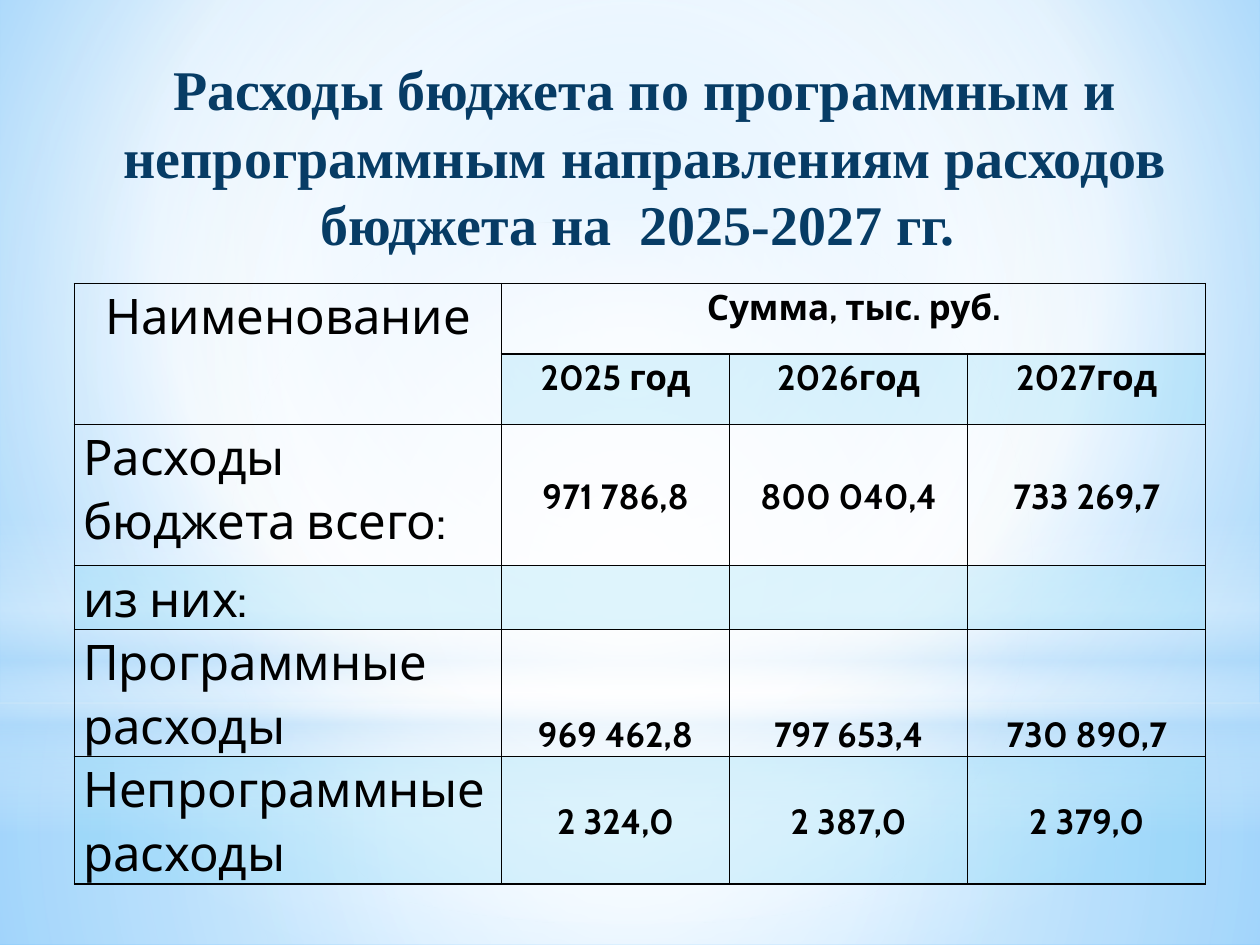
from lxml import etree
from pptx import Presentation
from pptx.dml.color import RGBColor
from pptx.enum.shapes import MSO_SHAPE
from pptx.enum.text import MSO_ANCHOR, PP_ALIGN
from pptx.oxml import parse_xml
from pptx.oxml.ns import qn
from pptx.util import Inches, Pt

RECT, OVAL = MSO_SHAPE.RECTANGLE, MSO_SHAPE.OVAL
LEFT, CENTER = PP_ALIGN.LEFT, PP_ALIGN.CENTER
TOP, MID, LOW = MSO_ANCHOR.TOP, MSO_ANCHOR.MIDDLE, MSO_ANCHOR.BOTTOM
NS = "http://schemas.openxmlformats.org/drawingml/2006/main"

# Content
TITLE = ("Расходы бюджета по программным и непрограммным "
         "направлениям расходов бюджета на  2025-2027 гг. ")
ROWS = [
    ["Наименование", "Сумма, тыс. руб.", "", ""],
    ["", "2025 год", "2026год", "2027год"],
    ["Расходы бюджета всего:", "971 786,8", "800 040,4", "733 269,7"],
    ["из них:", "", "", ""],
    ["Программные расходы", "969 462,8", "797 653,4", "730 890,7"],
    ["Непрограммные расходы", "2 324,0", "2 387,0", "2 379,0"],
]
WIDTHS = [3.39, 1.81, 1.89, 1.89]
HEIGHTS = [0.56, 0.56, 1.12, 0.35, 0.88, 0.88]
ANCHORS = [TOP, TOP, MID, TOP, LOW, MID]  # of the figures, row by row

# Background: stops are (position, colour, opacity), all in percent
BASE = [(0, "9ED5FF", 100), (60, "FFFFFF", 100), (100, "5BB9FF", 100)]
FOCUS = (20, 10, 20, 60)
HEART = (50, 50, 50, 50)
LAYERS = [
    (RECT, (0, 5.58, 10, 1.92), HEART,
     [(0, "FFFFFF", 91), (37, "FFFFFF", 76), (100, "B4DCFA", 79)]),
    (RECT, (0, 0, 10, 5.58), HEART,
     [(0, "FFFFFF", 89), (48, "FFFFFF", 62), (100, "B4DCFA", 79)]),
    (RECT, (0, 4.12, 10, 2.5), None,
     [(0, "FFFFFF", 0), (29, "FFFFFF", 30), (45, "B4DCFA", 40),
      (55, "FFFFFF", 26), (65, "B4DCFA", 60), (100, "FFFFFF", 0)]),
    (OVAL, (0, 1.75, 10, 5.58), HEART,
     [(0, "FFFFFF", 100), (56, "FFFFFF", 0)]),
]


def color(text):
    return RGBColor.from_string(text)


def blend(stops, focus):
    """Gradient fill: round about a focus, or top to bottom without one."""
    marks = "".join(
        f'<a:gs pos="{pos * 1000}"><a:srgbClr val="{tint}">'
        f'<a:alpha val="{alpha * 1000}"/></a:srgbClr></a:gs>'
        for pos, tint, alpha in stops)
    if focus:
        rect = " ".join(f'{side}="{v * 1000}"' for side, v in zip("ltrb", focus))
        way = f'<a:path path="circle"><a:fillToRect {rect}/></a:path>'
    else:
        way = '<a:lin ang="5400000" scaled="0"/>'
    return parse_xml(f'<a:gradFill xmlns:a="{NS}" rotWithShape="1">'
                     f'<a:gsLst>{marks}</a:gsLst>{way}</a:gradFill>')


def swap(fill, owner, stops, focus):
    """Put a gradient in the place of a plain fill."""
    fill.solid()
    old = owner.find(qn("a:solidFill"))
    owner.replace(old, blend(stops, focus))


def write(para, text, font, size, tint, bold):
    run = para.add_run()
    run.text = text
    run.font.name, run.font.size, run.font.bold = font, Pt(size), bold
    run.font.color.rgb = color(tint)


def edge(cell):
    """Thin black lines on all four sides."""
    props = cell._tc.get_or_add_tcPr()
    for side in "LRTB":
        props.append(parse_xml(
            f'<a:ln{side} xmlns:a="{NS}" w="12700"><a:solidFill>'
            f'<a:srgbClr val="000000"/></a:solidFill></a:ln{side}>'))


def style(cell, row, col, text):
    cell.margin_left = cell.margin_right = Inches(0.07)
    cell.margin_top = cell.margin_bottom = 0
    cell.vertical_anchor = ANCHORS[row] if col else TOP
    edge(cell)
    if row % 2 and (row > 1 or col):
        cell.fill.solid()
        cell.fill.fore_color.rgb = color("5ECCF3")
        tint = cell._tc.tcPr.find(qn("a:solidFill"))[0]
        etree.SubElement(tint, qn("a:alpha")).set("val", "20000")
    else:
        cell.fill.background()
    if text:
        para = cell.text_frame.paragraphs[0]
        para.alignment = CENTER if col or row == 0 else LEFT
        para.line_spacing = 1.07
        write(para, text, "Cabin", 20 if col else 28, "000000", col > 0)


def main():
    deck = Presentation()
    deck.slide_width, deck.slide_height = Inches(10), Inches(7.5)
    slide = deck.slides.add_slide(deck.slide_layouts[5])
    shapes = slide.shapes

    # Background and its glow layers
    back = slide.background.fill
    back.solid()
    swap(back, slide._element.cSld.bg.bgPr, BASE, FOCUS)
    for kind, box, focus, stops in LAYERS:
        glow = shapes.add_shape(kind, *map(Inches, box))
        glow.shadow.inherit = False
        glow.line.fill.background()
        swap(glow.fill, glow._element.spPr, stops, focus)

    # Title, brought in front of the layers
    title = shapes.title
    shapes._spTree.append(title._element)
    title.left, title.top = Inches(0.67), Inches(0.29)
    title.width, title.height = Inches(8.9), Inches(1.89)
    frame = title.text_frame
    frame.word_wrap, frame.vertical_anchor = True, MID
    frame.paragraphs[0].alignment = CENTER
    write(frame.paragraphs[0], TITLE, "Times New Roman", 32, "073C65", True)

    # Table
    table = shapes.add_table(
        len(ROWS), len(WIDTHS), Inches(0.59), Inches(2.25),
        Inches(sum(WIDTHS)), Inches(sum(HEIGHTS))).table
    table.first_row = table.horz_banding = False
    for col, width in zip(table.columns, WIDTHS):
        col.width = Inches(width)
    for row, height in zip(table.rows, HEIGHTS):
        row.height = Inches(height)
    for r, texts in enumerate(ROWS):
        for c, text in enumerate(texts):
            style(table.cell(r, c), r, c, text)
    table.cell(0, 0).merge(table.cell(1, 0))
    table.cell(0, 1).merge(table.cell(0, 3))

    deck.save("out.pptx")


if __name__ == "__main__":
    main()
